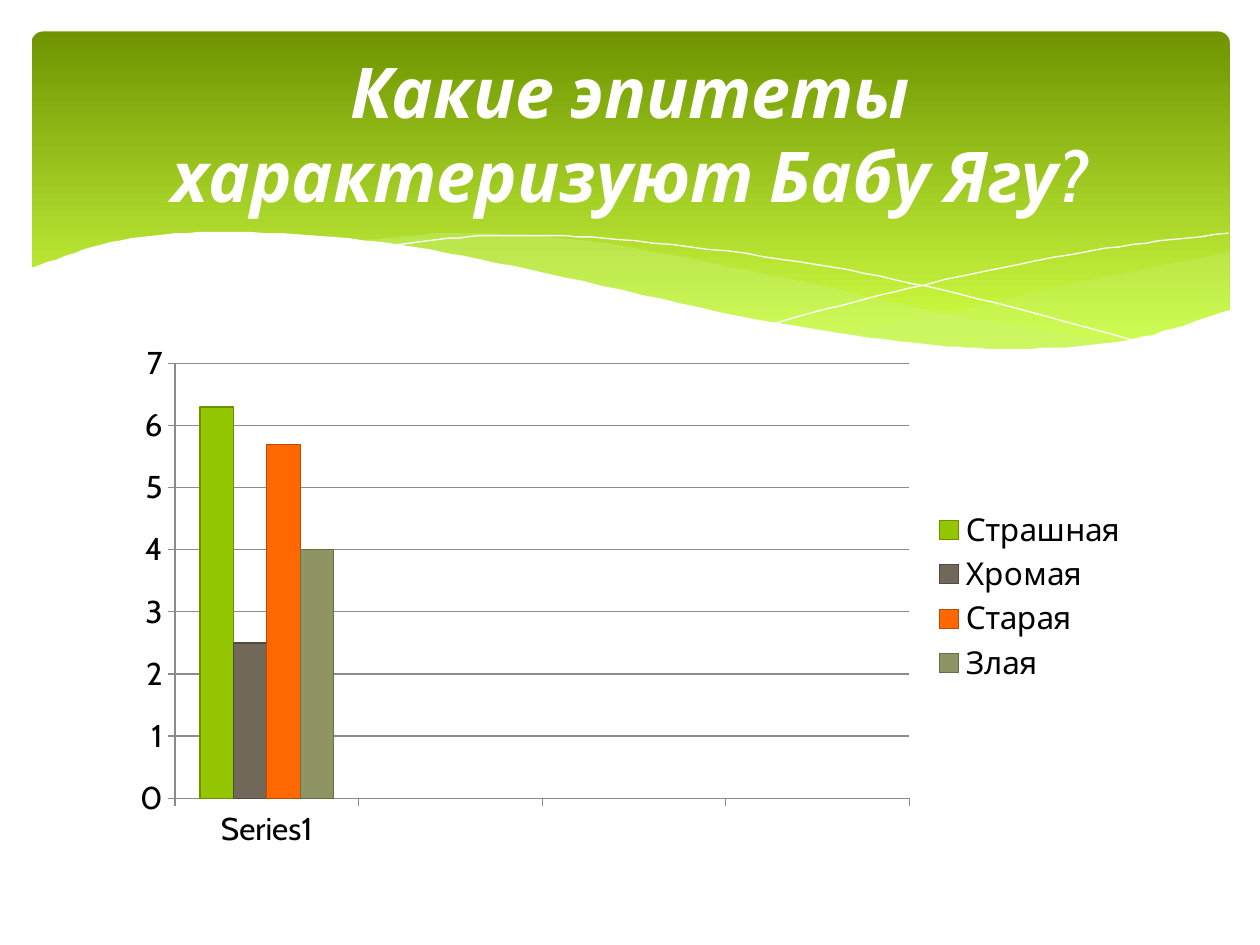
"""Build the slide on epithets for Baba Yaga with its wave header and column chart."""
from lxml import etree
from pptx import Presentation
from pptx.chart.data import CategoryChartData
from pptx.dml.color import RGBColor
from pptx.enum.chart import XL_CHART_TYPE, XL_LEGEND_POSITION, XL_TICK_MARK
from pptx.enum.shapes import MSO_SHAPE
from pptx.enum.text import MSO_ANCHOR, PP_ALIGN
from pptx.oxml.ns import qn
from pptx.util import Pt

COLUMN = XL_CHART_TYPE.COLUMN_CLUSTERED
RIGHT = XL_LEGEND_POSITION.RIGHT
OUT = XL_TICK_MARK.OUTSIDE
ROUND = MSO_SHAPE.ROUNDED_RECTANGLE
MIDDLE = MSO_ANCHOR.MIDDLE
CENTER = PP_ALIGN.CENTER
PX = 9144
STEPS = 10
FONT = "Cabin"
WHITE = "FFFFFF"
LIME = "CAF278"
GRAY = "8B8B8B"
THIN = Pt(0.75)


def rgb(code):
    return RGBColor.from_string(code)


def curve(knots):
    """Join the knots by cubic arcs whose slope at a knot follows its neighbours."""
    last = len(knots) - 1
    slopes = []
    for i in range(last + 1):
        (ax, ay), (bx, by) = knots[max(i - 1, 0)], knots[min(i + 1, last)]
        slopes.append((by - ay) / (bx - ax))
    points = [knots[0]]
    for i in range(last):
        (ax, ay), (bx, by) = knots[i], knots[i + 1]
        run, rise = bx - ax, by - ay
        for step in range(1, STEPS + 1):
            t = step / STEPS
            bend = (1 - t) * (slopes[i] * run - rise) - t * (slopes[i + 1] * run - rise)
            points.append((ax + t * run, ay + t * rise + t * (1 - t) * bend))
    return points


deck = Presentation()
deck.slide_width, deck.slide_height = 1000 * PX, 750 * PX
slide = deck.slides.add_slide(deck.slide_layouts[5])
shapes = slide.shapes

band = shapes.add_shape(ROUND, 25 * PX, 25 * PX, 951 * PX, 270 * PX)
band.adjustments[0] = 0.034
band.shadow.inherit = False
band.line.fill.background()
band.fill.gradient()
band.fill.gradient_angle = 270
for stop, (place, code) in zip(band.fill.gradient_stops, [(0, "6F9400"), (0.9, "D0FF44")]):
    stop.position = place
    stop.color.rgb = rgb(code)

east = {
    "top": [(661, 265), (753, 248), (861, 223), (976, 200)],
    "base": [(976, 247), (921, 265), (863, 275), (803, 278), (745, 275), (661, 265)],
}
west = {
    "top": [(286, 191), (361, 185), (465, 191), (629, 222), (741, 247), (893, 273)],
    "base": [(893, 273), (818, 278), (695, 270), (566, 248), (449, 222), (286, 191)],
}
front = {
    "top": [(23, 213), (95, 191), (185, 184), (316, 194), (447, 220),
            (603, 254), (726, 272), (809, 277), (899, 269), (977, 246)],
    "base": [(977, 329), (23, 329)],
}
fall = [(309, 195), (387, 187), (489, 190), (636, 208), (760, 233), (907, 272)]
climb = [(613, 257), (720, 229), (866, 199), (975, 185)]

waves = [
    ([east["top"], east["base"]], LIME, 29),
    ([west["top"], west["base"]], LIME, 40),
    ([fall], None, 100),
    ([climb], None, 100),
    ([front["top"], front["base"]], WHITE, 100),
]
for edges, code, alpha in waves:
    points = [point for edge in edges for point in curve(edge)]
    pen = shapes.build_freeform(*points[0], scale=PX)
    pen.add_line_segments(points[1:], close=code is not None)
    wave = pen.convert_to_shape()
    wave.shadow.inherit = False
    if code:
        wave.line.fill.background()
        wave.fill.solid()
        wave.fill.fore_color.rgb = rgb(code)
    else:
        wave.fill.background()
        wave.line.color.rgb = rgb(WHITE)
        wave.line.width = Pt(0)
    if alpha < 100:
        tint = next(wave.element.iter(qn("a:srgbClr")))
        etree.SubElement(tint, qn("a:alpha")).set("val", str(alpha * 1000))

series = [
    ("Страшная", 6.3, "94C600", "6C9100"),
    ("Хромая", 2.5, "71685A", "524B41"),
    ("Старая", 5.7, "FF6700", "BC4B00"),
    ("Злая", 4, "909465", "696C49"),
]
data = CategoryChartData()
data.categories = ["Series1", "", "", ""]
for name, value, code, edge in series:
    data.add_series(name, [value, None, None, None])
chart = shapes.add_chart(COLUMN, 95 * PX, 265 * PX, 810 * PX, 417 * PX, data).chart
chart.has_title = False
chart.font.name = FONT
chart.font.size = Pt(18)
chart.font.color.rgb = rgb("000000")
chart.has_legend = True
chart.legend.position = RIGHT
chart.legend.include_in_layout = False
plot = chart.plots[0]
plot.gap_width = 150
plot.overlap = 0
plot.vary_by_categories = False
for bar, (name, value, code, edge) in zip(plot.series, series):
    bar.format.fill.solid()
    bar.format.fill.fore_color.rgb = rgb(code)
    bar.format.line.color.rgb = rgb(edge)
    bar.format.line.width = THIN

names, scale = chart.category_axis, chart.value_axis
scale.minimum_scale, scale.maximum_scale, scale.major_unit = 0, 7, 1
scale.has_major_gridlines = True
for axis in (names, scale):
    axis.major_tick_mark = OUT
for item in (names, scale, scale.major_gridlines):
    item.format.line.color.rgb = rgb(GRAY)
    item.format.line.width = THIN

title = shapes.title
for side, size in {"left": 50, "top": 37, "width": 900, "height": 137}.items():
    setattr(title, side, size * PX)
shapes.element.append(title.element)
frame = title.text_frame
frame.text = "Какие эпитеты характеризуют Бабу Ягу?"
frame.word_wrap = True
frame.vertical_anchor = MIDDLE
line = frame.paragraphs[0]
line.alignment = CENTER
font = line.runs[0].font
for key, value in {"name": FONT, "size": Pt(40), "bold": True, "italic": True}.items():
    setattr(font, key, value)
font.color.rgb = rgb(WHITE)

deck.save("out.pptx")
